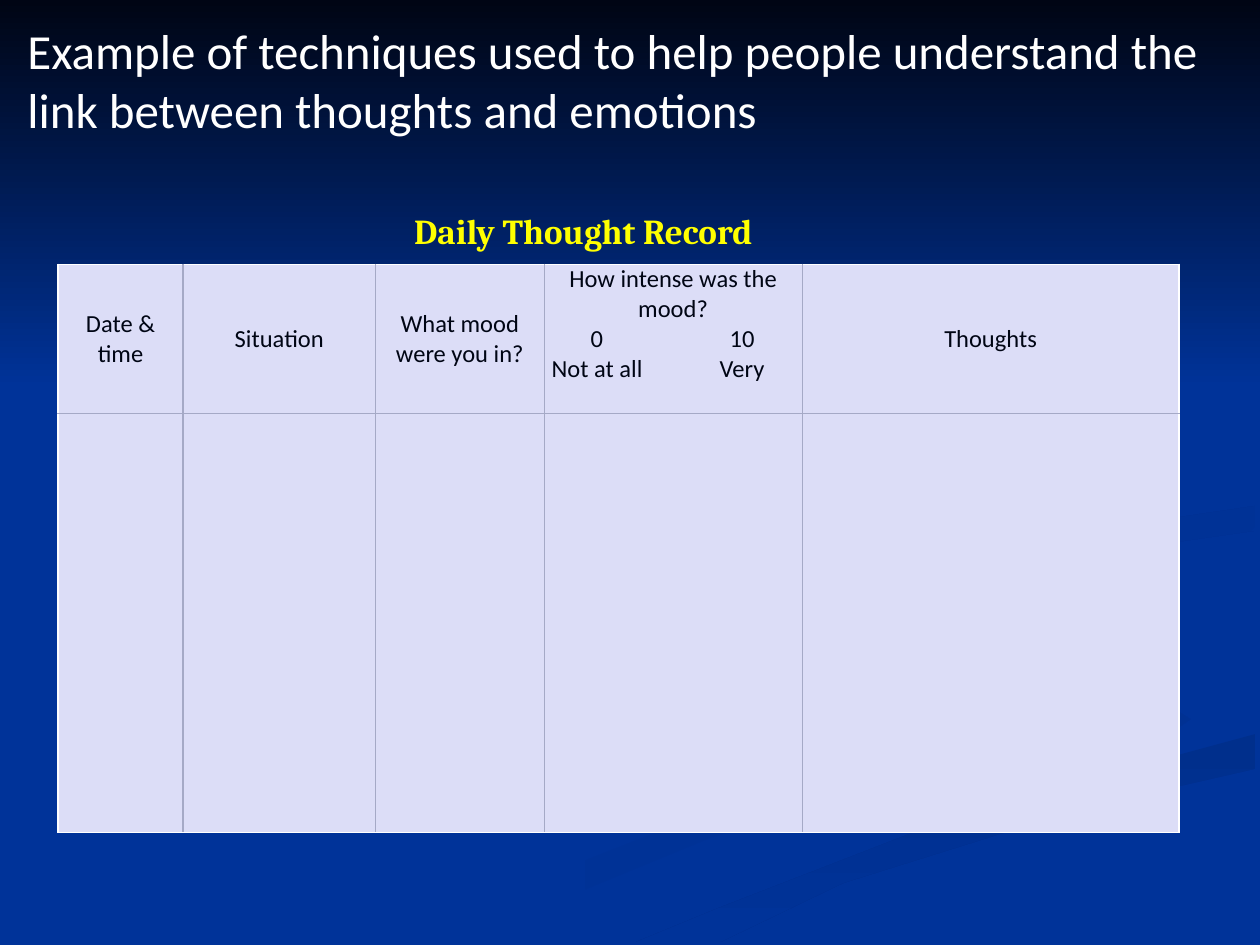
"""Build the thought record slide."""
from dataclasses import dataclass

from lxml import etree
from pptx import Presentation
from pptx.dml.color import RGBColor
from pptx.enum.shapes import MSO_SHAPE
from pptx.enum.text import MSO_ANCHOR, MSO_AUTO_SIZE, PP_ALIGN
from pptx.oxml.ns import qn
from pptx.util import Cm, Pt

RECT = MSO_SHAPE.RECTANGLE
TOP, MIDDLE = MSO_ANCHOR.TOP, MSO_ANCHOR.MIDDLE
LEFT, CENTER = PP_ALIGN.LEFT, PP_ALIGN.CENTER
NO_FIT = MSO_AUTO_SIZE.NONE

BLUE = RGBColor.from_string("003399")
NAVY = RGBColor.from_string("000514")
DUSK = RGBColor.from_string("003193")
DEEP = RGBColor.from_string("002F8C")
SHADE = RGBColor.from_string("003091")
WHITE = RGBColor.from_string("FFFFFF")
YELLOW = RGBColor.from_string("FFFF00")
PALE = RGBColor.from_string("DCDDF7")
GRAY = RGBColor.from_string("A5A9C6")


@dataclass
class Wave:
    start: RGBColor
    end: RGBColor
    angle: int
    points: list[tuple[int, int]]


@dataclass
class Column:
    width: float
    head: str


WAVES = [
    Wave(BLUE, DUSK, 0, [
        (198, 140), (146, 117), (199, 142), (147, 162), (76, 190),
        (92, 190), (143, 169), (202, 150)]),
    Wave(BLUE, DUSK, 45, [
        (240, 145), (226, 136), (184, 118), (202, 133), (233, 148),
        (227, 154)]),
    Wave(DEEP, BLUE, 90, [
        (128, 190), (145, 190), (170, 178), (218, 163), (253, 155),
        (253, 148), (194, 164), (145, 183)]),
    Wave(SHADE, BLUE, 45, [
        (198, 117), (210, 126), (204, 120), (218, 112), (253, 107),
        (253, 102), (212, 108)]),
]
COLUMNS = [
    Column(2.52, "Date & time"),
    Column(3.88, "Situation"),
    Column(3.4, "What mood were you in?"),
    Column(5.2, "How intense was the mood?"),
    Column(7.6, "Thoughts"),
]
SCALE = [("\t0\t10", (0.91, 3.84)), ("Not at all\tVery", (3.84,))]
ROWS = (2.98, 8.45)


def paint(shape, start: RGBColor, end: RGBColor, angle: int) -> None:
    """Fill a shape with a clockwise gradient."""
    shape.shadow.inherit = False
    shape.line.fill.background()
    shape.fill.gradient()
    shape.fill.gradient_angle = -angle % 360
    for stop, color in zip(shape.fill.gradient_stops, (start, end)):
        stop.color.rgb = color


def draw_wave(slide, wave: Wave) -> None:
    """Draw a wave whose points are in millimetres."""
    pen = slide.shapes.build_freeform(*wave.points[0], scale=Cm(0.1))
    pen.add_line_segments(wave.points[1:])
    paint(pen.convert_to_shape(), wave.start, wave.end, wave.angle)


def style(para, face: str, size: int, color: RGBColor, align=LEFT) -> None:
    """Set the font and alignment of a paragraph."""
    para.alignment = align
    para.font.name = face
    para.font.size = Pt(size)
    para.font.color.rgb = color


def add_tabs(para, stops: tuple[float, ...]) -> None:
    """Give a paragraph centred tab stops."""
    tabs = etree.Element(qn("a:tabLst"))
    for stop in stops:
        etree.SubElement(tabs, qn("a:tab"), pos=str(Cm(stop)), algn="ctr")
    props = para._p.get_or_add_pPr()
    props.find(qn("a:defRPr")).addprevious(tabs)


def add_edge(cell, side: str, outer: bool) -> None:
    """Draw one border of a cell."""
    width = Pt(1) if outer else Pt(0.75)
    line = etree.SubElement(
        cell._tc.get_or_add_tcPr(), qn(f"a:ln{side}"), w=str(width))
    fill = etree.SubElement(line, qn("a:solidFill"))
    etree.SubElement(fill, qn("a:srgbClr"), val=str(WHITE if outer else GRAY))


def draw_table(slide) -> None:
    """Draw the thought record."""
    count = len(COLUMNS)
    frame = slide.shapes.add_table(
        len(ROWS), count, Cm(1.17), Cm(5.33),
        Cm(sum(col.width for col in COLUMNS)), Cm(sum(ROWS)))
    table = frame.table
    table.first_row = table.horz_banding = False
    for row, height in enumerate(ROWS):
        table.rows[row].height = Cm(height)
        for pos, col in enumerate(COLUMNS):
            table.columns[pos].width = Cm(col.width)
            cell = table.cell(row, pos)
            cell.margin_left = cell.margin_right = Cm(0.15)
            cell.margin_top = cell.margin_bottom = 0
            cell.vertical_anchor = MIDDLE
            add_edge(cell, "L", pos == 0)
            add_edge(cell, "R", pos == count - 1)
            add_edge(cell, "T", row == 0)
            add_edge(cell, "B", row == len(ROWS) - 1)
            cell.fill.solid()
            cell.fill.fore_color.rgb = PALE
            if row == 0:
                cell.text = col.head
                style(cell.text_frame.paragraphs[0], "Calibri", 14, NAVY, CENTER)
    mood = table.cell(0, 3)
    mood.margin_bottom = Cm(0.6)
    for text, stops in SCALE:
        para = mood.text_frame.add_paragraph()
        para.text = text
        style(para, "Calibri", 14, NAVY)
        add_tabs(para, stops)


def main() -> None:
    """Build and save the slide."""
    deck = Presentation()
    deck.slide_width, deck.slide_height = Cm(25.4), Cm(19.05)
    slide = deck.slides.add_slide(deck.slide_layouts[5])
    slide.background.fill.solid()
    slide.background.fill.fore_color.rgb = BLUE
    for wave in WAVES:
        draw_wave(slide, wave)
    sky = slide.shapes.add_shape(RECT, 0, 0, deck.slide_width, Cm(7.82))
    paint(sky, NAVY, BLUE, 90)
    draw_table(slide)

    label = slide.shapes.add_textbox(Cm(8.1), Cm(4.09), Cm(11.81), Cm(1.12))
    label.text_frame.word_wrap = True
    para = label.text_frame.paragraphs[0]
    para.text = "Daily Thought Record"
    style(para, "Cambria", 20, YELLOW)
    para.font.bold = True

    title = slide.shapes.title
    title.left, title.top = Cm(0.3), Cm(0.28)
    title.width, title.height = Cm(24.36), Cm(2.64)
    frame = title.text_frame
    frame.text = ("Example of techniques used to help people understand the "
                  "link between thoughts and emotions")
    frame.word_wrap = True
    frame.auto_size = NO_FIT
    frame.vertical_anchor = TOP
    style(frame.paragraphs[0], "Calibri", 28, WHITE)
    slide.shapes.element.append(title.element)
    deck.save("out.pptx")


if __name__ == "__main__":
    main()
